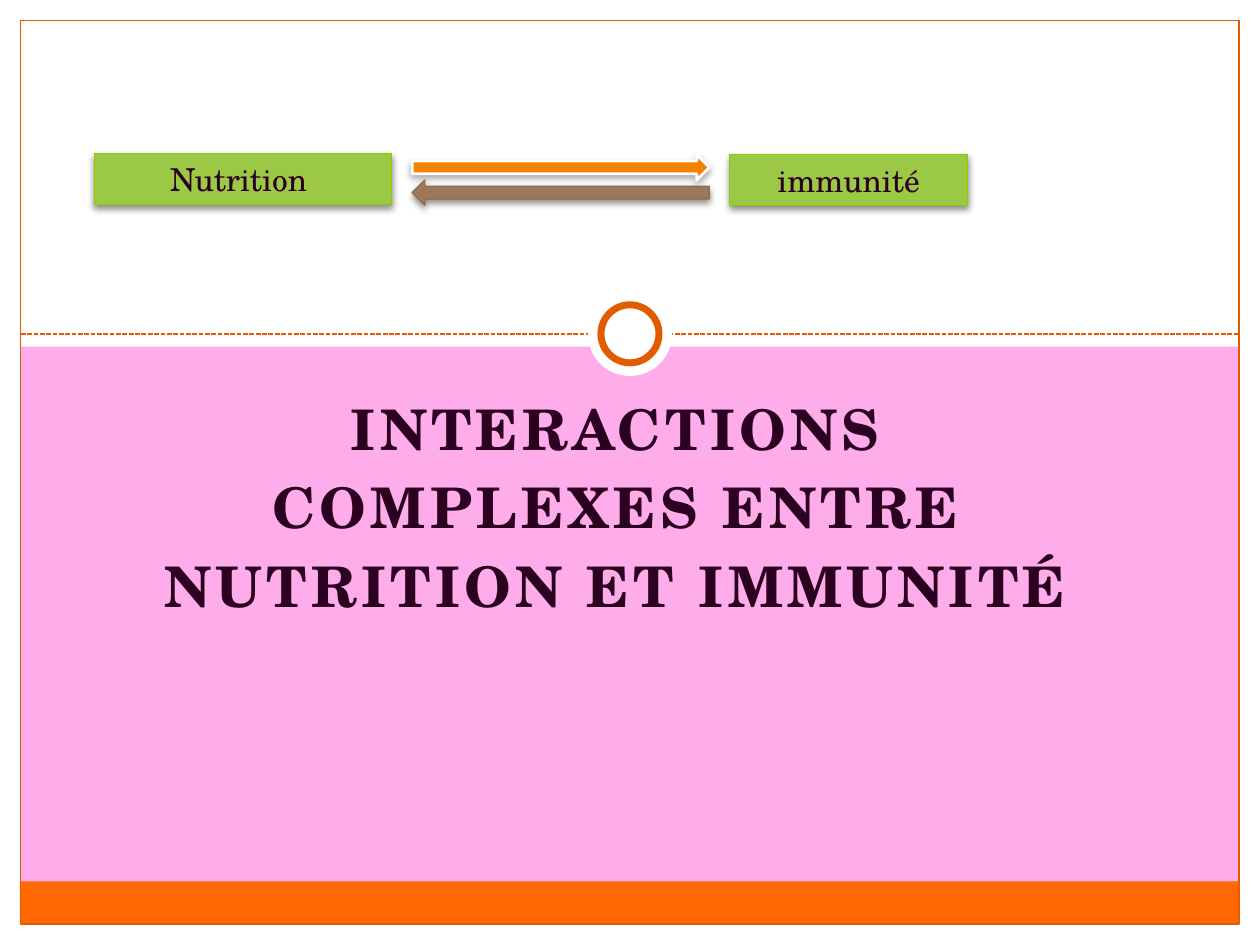
from lxml.etree import SubElement
from pptx import Presentation
from pptx.dml.color import RGBColor
from pptx.enum.dml import MSO_LINE
from pptx.enum.shapes import MSO_CONNECTOR, MSO_SHAPE as Preset
from pptx.enum.text import MSO_ANCHOR, PP_ALIGN
from pptx.oxml.ns import qn
from pptx.util import Cm, Pt

FONT = "TeX Gyre Schola"
WHITE = RGBColor(0xFF, 0xFF, 0xFF)
PINK = RGBColor(0xFF, 0xAD, 0xEA)
ORANGE = RGBColor(0xFF, 0x67, 0x00)
RUST = RGBColor(0xE1, 0x5B, 0x00)
PLUM = RGBColor(0x2B, 0x00, 0x20)
GREEN = RGBColor(0x9C, 0xC9, 0x45)
GREEN_EDGE = RGBColor(0x94, 0xC6, 0x00)
AMBER = RGBColor(0xF6, 0x81, 0x00)
BROWN = RGBColor(0x9D, 0x79, 0x5B)
BROWN_EDGE = RGBColor(0x95, 0x6B, 0x43)

TITLE_LINES = ["INTERACTIONS", "COMPLEXES ENTRE", "NUTRITION ET IMMUNITÉ"]

# All lengths are in centimetres.
WIDTH, HEIGHT = 25.4, 19.05
MARGIN = 0.42
INNER_WIDTH, INNER_HEIGHT = WIDTH - 2 * MARGIN, HEIGHT - 2 * MARGIN
TOP_BAND = 6.99
FOOTER = 0.86
DIVIDER_Y = 6.73
TITLE_BOX = (2.31, 7.82, 20.19, 4.88)

# Preset, box, fill, line colour, line width in points
FRAME = [
    (Preset.RECTANGLE, (0, HEIGHT - MARGIN, WIDTH, MARGIN), WHITE, None, 0),
    (Preset.RECTANGLE, (WIDTH - MARGIN, 0, MARGIN, HEIGHT), WHITE, None, 0),
    (Preset.RECTANGLE, (0, 0, MARGIN, HEIGHT), WHITE, None, 0),
    (Preset.RECTANGLE, (0, 0, WIDTH, TOP_BAND), WHITE, None, 0),
    (Preset.RECTANGLE, (MARGIN, HEIGHT - MARGIN - FOOTER, INNER_WIDTH, FOOTER),
     ORANGE, None, 0),
    (Preset.RECTANGLE, (MARGIN, MARGIN, INNER_WIDTH, INNER_HEIGHT), None, RUST, 0.75),
]
RINGS = [(1.7, None, 0), (1.17, RUST, 4)]  # diameter, line colour, line width

# Text, box
CONCEPTS = [
    ("Nutrition ", (1.9, 3.1, 6, 1.03)),
    ("immunité", (14.71, 3.12, 4.8, 1.03)),
]
# Preset, box, fill, line colour, line width, shadow opacity in percent
ARROWS = [
    (Preset.RIGHT_ARROW, (8.31, 3.12, 5.99, 0.51), AMBER, WHITE, 1.57, 35),
    (Preset.LEFT_ARROW, (8.31, 3.63, 5.99, 0.51), BROWN, BROWN_EDGE, 0.75, 45),
]


def add_preset(slide, preset, box, fill, line, line_width):
    shape = slide.shapes.add_shape(preset, *map(Cm, box))
    shape.shadow.inherit = False
    if fill is None:
        shape.fill.background()
    else:
        shape.fill.solid()
        shape.fill.fore_color.rgb = fill
    if line is None:
        shape.line.fill.background()
    else:
        shape.line.color.rgb = line
        shape.line.width = Pt(line_width)
    return shape


def add_shadow(shape, opacity):
    """Give the shape a soft shadow that falls straight down."""
    effects = shape._element.spPr.find(qn("a:effectLst"))
    shadow = SubElement(effects, qn("a:outerShdw"), blurRad=str(Pt(4)),
                        dist=str(Pt(2)), dir="5400000", rotWithShape="0")
    color = SubElement(shadow, qn("a:srgbClr"), val="000000")
    SubElement(color, qn("a:alpha"), val=str(opacity * 1000))


def format_text(text_frame, size, bold=False):
    for paragraph in text_frame.paragraphs:
        paragraph.alignment = PP_ALIGN.CENTER
        for run in paragraph.runs:
            run.font.name = FONT
            run.font.size = Pt(size)
            run.font.bold = bold
            run.font.color.rgb = PLUM


def add_divider(slide):
    line = slide.shapes.add_connector(
        MSO_CONNECTOR.STRAIGHT, Cm(MARGIN), Cm(DIVIDER_Y),
        Cm(WIDTH - MARGIN), Cm(DIVIDER_Y))
    line.line.color.rgb = RUST
    line.line.width = Pt(0.9)
    line.line.dash_style = MSO_LINE.SQUARE_DOT
    line.line._ln.find(qn("a:prstDash")).set("val", "sysDash")
    SubElement(line._element.spPr, qn("a:effectLst"))


def fill_title(title):
    title.left, title.top, title.width, title.height = map(Cm, TITLE_BOX)
    text_frame = title.text_frame
    text_frame.text = "\n".join(TITLE_LINES)
    text_frame.word_wrap = True
    text_frame.vertical_anchor = MSO_ANCHOR.TOP
    format_text(text_frame, 32, bold=True)
    for paragraph in text_frame.paragraphs:
        paragraph.space_before = Pt(6.4)
        for run in paragraph.runs:
            run.font._element.set("spc", "250")


def main():
    presentation = Presentation()
    presentation.slide_width, presentation.slide_height = Cm(WIDTH), Cm(HEIGHT)
    slide = presentation.slides.add_slide(presentation.slide_layouts[5])
    slide.background.fill.solid()
    slide.background.fill.fore_color.rgb = PINK

    for part in FRAME:
        add_preset(slide, *part)
    add_divider(slide)
    for diameter, line, line_width in RINGS:
        box = ((WIDTH - diameter) / 2, DIVIDER_Y - diameter / 2, diameter, diameter)
        add_preset(slide, Preset.OVAL, box, WHITE, line, line_width)

    fill_title(slide.shapes.title)

    for text, box in CONCEPTS:
        shape = add_preset(slide, Preset.RECTANGLE, box, GREEN, GREEN_EDGE, 0.75)
        add_shadow(shape, 45)
        shape.text_frame.text = text
        format_text(shape.text_frame, 18)
    for *arrow, opacity in ARROWS:
        add_shadow(add_preset(slide, *arrow), opacity)

    presentation.save("out.pptx")


if __name__ == "__main__":
    main()
